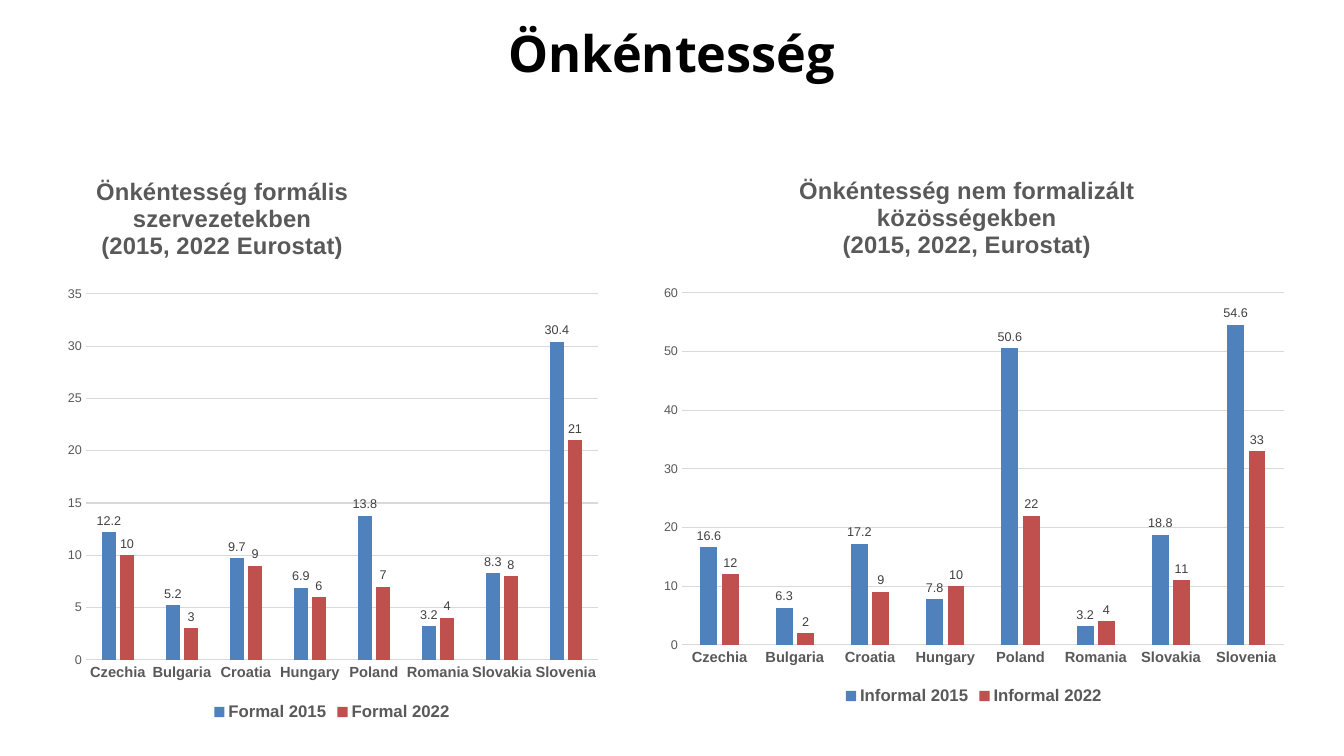
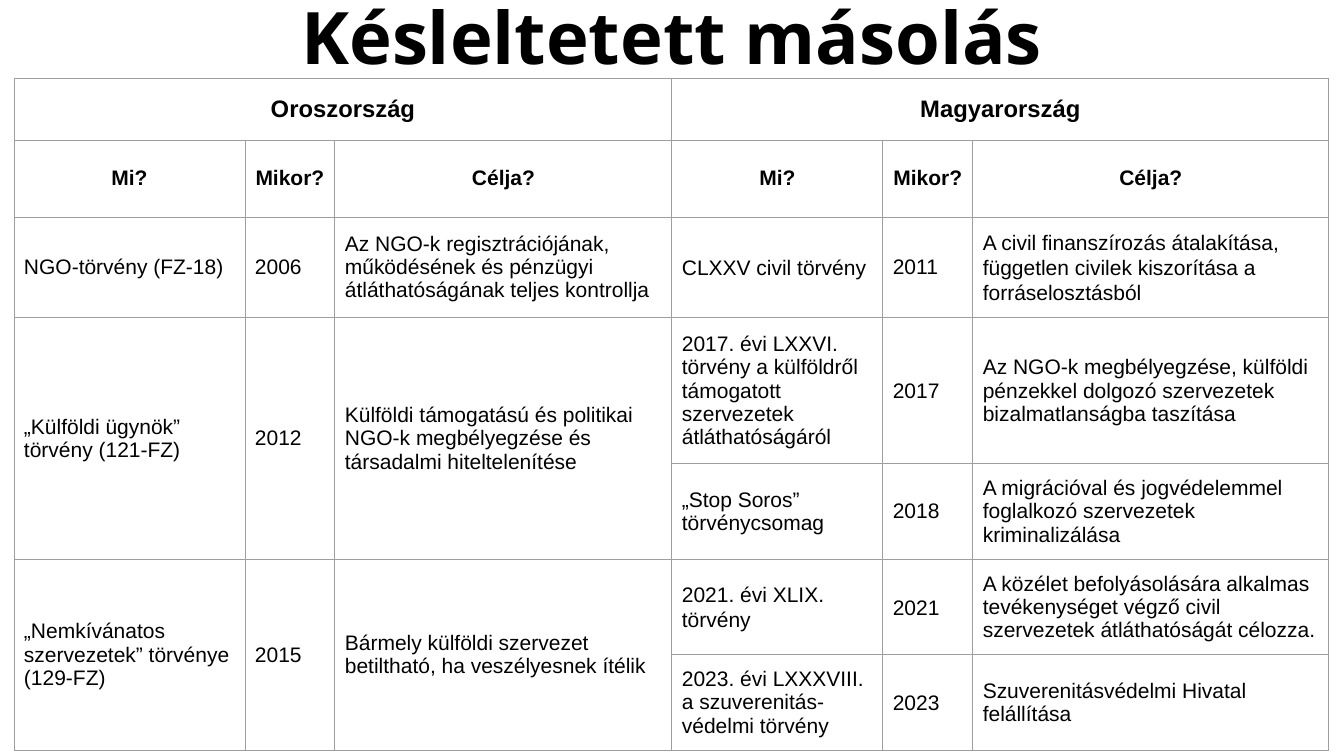
from pptx import Presentation
from pptx.chart.data import CategoryChartData as ChartData
from pptx.dml.color import RGBColor as RGB
from pptx.enum.chart import XL_CHART_TYPE as Kind
from pptx.enum.chart import XL_LABEL_POSITION as LabelPos
from pptx.enum.chart import XL_LEGEND_POSITION as LegendPos
from pptx.enum.chart import XL_TICK_MARK as Tick
from pptx.enum.text import MSO_ANCHOR as Anchor
from pptx.enum.text import PP_ALIGN as Align
from pptx.oxml import parse_xml
from pptx.oxml.ns import nsdecls, qn
from pptx.util import Pt

WIDE, HIGH = 1344, 756
SCALE = 12192000 / WIDE
BODY, HEAD = "Arial", "Open Sans"
COLORS = {
    "ink": "000000", "gray": "595959", "label": "404040", "grid": "D9D9D9",
    "border": "9E9E9E", "blue": "4F81BD", "red": "C0504D",
}

LANDS = ["Czechia", "Bulgaria", "Croatia", "Hungary",
         "Poland", "Romania", "Slovakia", "Slovenia"]

# Box and plot are left, top, width, height; spot is left, top.
FORMAL = {
    "box": (56, 167, 552, 558), "plot": (86, 294, 512, 366), "spot": (93, 173),
    "title": ["Önkéntesség formális", "szervezetekben", "(2015, 2022 Eurostat)"],
    "top": 35, "step": 5,
    "series": {
        "Formal 2015": [12.2, 5.2, 9.7, 6.9, 13.8, 3.2, 8.3, 30.4],
        "Formal 2022": [10, 3, 9, 6, 7, 4, 8, 21],
    },
}
INFORMAL = {
    "box": (651, 167, 646, 542), "plot": (682, 293, 602, 352), "spot": (796, 172),
    "title": ["Önkéntesség nem formalizált", "közösségekben",
              "(2015, 2022, Eurostat)"],
    "top": 60, "step": 10,
    "series": {
        "Informal 2015": [16.6, 6.3, 17.2, 7.8, 50.6, 3.2, 18.8, 54.6],
        "Informal 2022": [12, 2, 9, 10, 22, 4, 11, 33],
    },
}

COLS = [231, 90, 337, 211, 90, 356]
ROWS = [62, 77, 95, 137, 90, 90, 90]
ASKS = ["Mi?", "Mikor?", "Célja?"]
CELLS = [
    ["Oroszország", "", "", "Magyarország", "", ""],
    ASKS * 2,
    ["NGO-törvény (FZ-18)", "2006",
     "Az NGO-k regisztrációjának, működésének és pénzügyi átláthatóságának "
     "teljes kontrollja",
     "CLXXV civil törvény", "2011",
     "A civil finanszírozás átalakítása, független civilek kiszorítása a "
     "forráselosztásból"],
    ["„Külföldi ügynök” törvény (121-FZ)", "2012",
     "Külföldi támogatású és politikai NGO-k megbélyegzése és társadalmi "
     "hiteltelenítése",
     "2017. évi LXXVI. törvény a külföldről támogatott szervezetek "
     "átláthatóságáról", "2017",
     "Az NGO-k megbélyegzése, külföldi pénzekkel dolgozó szervezetek "
     "bizalmatlanságba taszítása"],
    ["", "", "", "„Stop Soros” törvénycsomag", "2018",
     "A migrációval és jogvédelemmel foglalkozó szervezetek kriminalizálása"],
    ["„Nemkívánatos szervezetek” törvénye (129-FZ)", "2015",
     "Bármely külföldi szervezet betiltható, ha veszélyesnek ítélik",
     "2021. évi XLIX. törvény", "2021",
     "A közélet befolyásolására alkalmas tevékenységet végző civil szervezetek "
     "átláthatóságát célozza."],
    ["", "", "", "2023. évi LXXXVIII. a szuverenitás-védelmi törvény", "2023",
     "Szuverenitásvédelmi Hivatal felállítása"],
]
MERGES = [((0, col), (0, col + 2)) for col in (0, 3)]
MERGES += [((row, col), (row + 1, col)) for row in (3, 5) for col in range(3)]
LOOSE = {(2, 3), (2, 5), (5, 3), (5, 4), (6, 4)}


def px(*sizes):
    """Turn px lengths into a list of EMU."""
    return [round(size * SCALE) for size in sizes]


def color(name):
    return RGB.from_string(COLORS[name])


def style(font, size, tint="ink", bold=False, face=BODY):
    font.name, font.size, font.bold = face, Pt(size), bold
    font.color.rgb = color(tint)


def write(para, text, *look):
    run = para.add_run()
    run.text = text
    style(run.font, *look)


def add_title(slide, text, box, size):
    frame = slide.shapes.add_textbox(*px(*box)).text_frame
    frame.word_wrap = True
    frame.vertical_anchor = Anchor.MIDDLE
    para = frame.paragraphs[0]
    para.alignment = Align.CENTER
    write(para, text, size, "ink", True, HEAD)


def place(parent, index, box, area):
    """Fix a chart part at area, given in slide px, inside the chart's box."""
    old = parent.find(qn("c:layout"))
    if old is not None:
        parent.remove(old)
    left, top, wide, high = box
    parts = [(area[0] - left) / wide, (area[1] - top) / high]
    tags = '<c:xMode val="edge"/><c:yMode val="edge"/>'
    if len(area) == 4:
        parts += [area[2] / wide, area[3] / high]
        tags = '<c:layoutTarget val="inner"/>' + tags
    tags += "".join(f'<c:{key} val="{part:.4f}"/>' for key, part in zip("xywh", parts))
    parent.insert(index, parse_xml(
        f'<c:layout {nsdecls("c")}><c:manualLayout>{tags}'
        "</c:manualLayout></c:layout>"))


def set_axes(chart, top, step):
    lands, scale = chart.category_axis, chart.value_axis
    for axis in (lands, scale):
        axis.major_tick_mark = axis.minor_tick_mark = Tick.NONE
    style(lands.tick_labels.font, 10.5, "gray", True)
    style(scale.tick_labels.font, 9, "gray")
    scale.minimum_scale, scale.maximum_scale, scale.major_unit = 0, top, step
    scale.format.line.fill.background()
    for line in (lands.format.line, scale.major_gridlines.format.line):
        line.color.rgb = color("grid")
        line.width = Pt(0.75)


def add_bars(slide, info):
    data = ChartData(number_format="General")
    data.categories = LANDS
    for name, vals in info["series"].items():
        data.add_series(name, vals)
    chart = slide.shapes.add_chart(
        Kind.COLUMN_CLUSTERED, *px(*info["box"]), data).chart
    style(chart.font, 10)

    frame = chart.chart_title.text_frame
    for num, text in enumerate(info["title"]):
        para = frame.add_paragraph() if num else frame.paragraphs[0]
        write(para, text, 17, "gray", True)
    place(chart.chart_title.element, 1, info["box"], info["spot"])
    area = chart.element.find(".//" + qn("c:plotArea"))
    place(area, 0, info["box"], info["plot"])
    set_axes(chart, info["top"], info["step"])

    chart.has_legend = True
    chart.legend.position = LegendPos.BOTTOM
    chart.legend.include_in_layout = False
    style(chart.legend.font, 12, "gray", True)

    plot = chart.plots[0]
    plot.gap_width, plot.overlap, plot.vary_by_categories = 219, -27, False
    for series, tint in zip(plot.series, ("blue", "red")):
        series.format.fill.solid()
        series.format.fill.fore_color.rgb = color(tint)
    plot.has_data_labels = True
    labels = plot.data_labels
    labels.show_value, labels.position = True, LabelPos.OUTSIDE_END
    style(labels.font, 9, "label")


def frame_cell(cell):
    """Draw the four borders and clear the fill."""
    props = cell._tc.get_or_add_tcPr()
    for side in "LRTB":
        props.append(parse_xml(
            f'<a:ln{side} {nsdecls("a")} w="{Pt(0.75)}"><a:solidFill>'
            f'<a:srgbClr val="{COLORS["border"]}"/></a:solidFill></a:ln{side}>'))
    cell.fill.background()


def fill_cell(cell, text, row, col):
    frame_cell(cell)
    cell.vertical_anchor = Anchor.MIDDLE
    cell.margin_left = cell.margin_right = px(10)[0]
    cell.margin_top = cell.margin_bottom = px(10)[0]
    if not text:
        return
    para = cell.text_frame.paragraphs[0]
    if row < 2:
        para.alignment = Align.CENTER
    if (row, col) in LOOSE:
        para.line_spacing = 1.07
    write(para, text, 15 if row else 17, "ink", row < 2)


def add_laws(slide):
    box = px(14, 78, sum(COLS), sum(ROWS))
    table = slide.shapes.add_table(len(ROWS), len(COLS), *box).table
    table.first_row = table.horz_banding = False
    for col, wide in zip(table.columns, px(*COLS)):
        col.width = wide
    for row, high in zip(table.rows, px(*ROWS)):
        row.height = high
    for start, end in MERGES:
        table.cell(*start).merge(table.cell(*end))
    for row, texts in enumerate(CELLS):
        for col, text in enumerate(texts):
            fill_cell(table.cell(row, col), text, row, col)


def main():
    deck = Presentation()
    deck.slide_width, deck.slide_height = px(WIDE, HIGH)
    blank = deck.slide_layouts[6]

    slide = deck.slides.add_slide(blank)
    add_title(slide, "Önkéntesség", (16, 17, 1312, 70), 36)
    for info in (FORMAL, INFORMAL):
        add_bars(slide, info)

    slide = deck.slides.add_slide(blank)
    add_title(slide, "Késleltetett másolás", (67, -27, 1210, 126), 51.7)
    add_laws(slide)

    deck.save("out.pptx")


if __name__ == "__main__":
    main()
